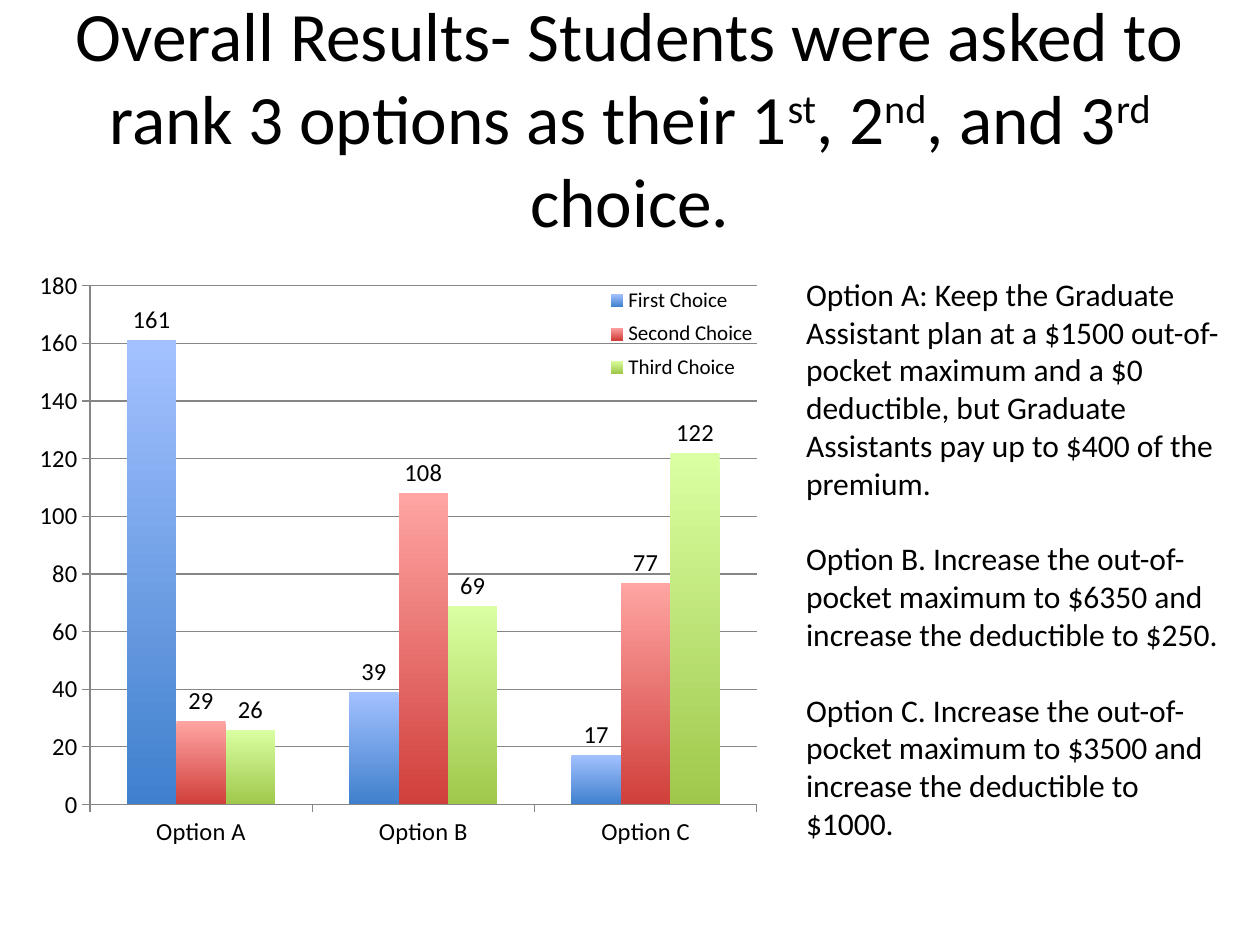
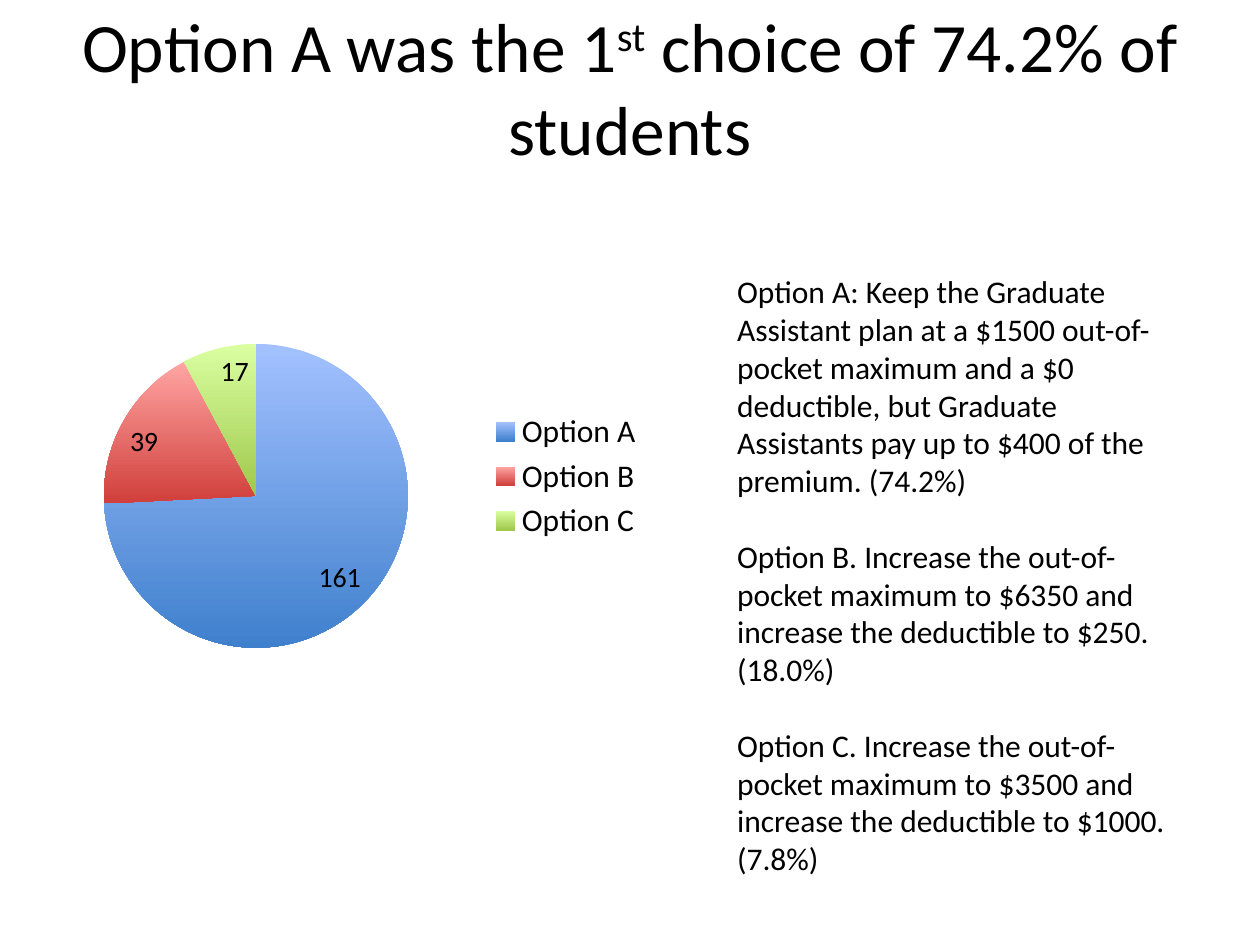
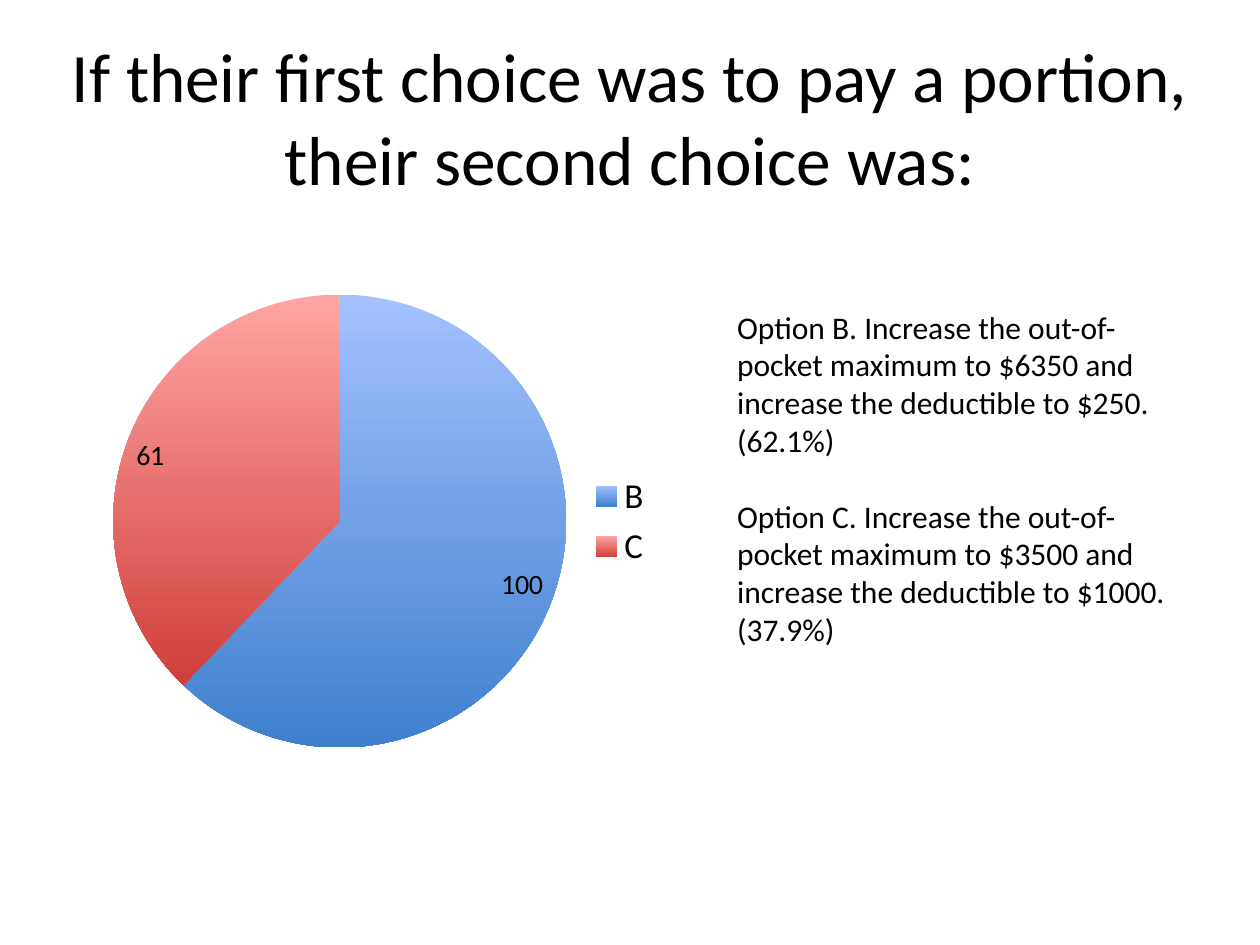
from lxml.etree import SubElement
from pptx import Presentation
from pptx.chart.data import CategoryChartData
from pptx.dml.color import RGBColor
from pptx.enum.chart import XL_CHART_TYPE, XL_LABEL_POSITION, XL_LEGEND_POSITION, XL_TICK_MARK
from pptx.enum.text import MSO_ANCHOR, MSO_AUTO_SIZE, PP_ALIGN
from pptx.oxml import parse_xml
from pptx.oxml.ns import nsdecls, qn
from pptx.util import Cm, Pt

FACE = "Calibri"
BLACK = RGBColor(0x00, 0x00, 0x00)
GREY = RGBColor(0x86, 0x86, 0x86)
BLUE = RGBColor(0xA3, 0xC1, 0xFF), RGBColor(0x3F, 0x80, 0xCD)
RED = RGBColor(0xFF, 0xA5, 0xA3), RGBColor(0xD0, 0x3F, 0x3B)
GREEN = RGBColor(0xDA, 0xFF, 0xA2), RGBColor(0x9F, 0xC8, 0x4B)
TONES = BLUE, RED, GREEN

PLAN_A = ("Option A: Keep the Graduate Assistant plan at a $1500 out-of-pocket maximum "
          "and a $0 deductible, but Graduate Assistants pay up to $400 of the premium.")
PLAN_B = ("Option B. Increase the out-of-pocket maximum to $6350 "
          "and increase the deductible to $250.")
PLAN_C = ("Option C. Increase the out-of-pocket maximum to $3500 "
          "and increase the deductible to $1000.")
OPTIONS = "Option A", "Option B", "Option C"


def style(font, size):
    """Give a font the shared face and colour at a size in points."""
    font.name = FACE
    font.size = Pt(size)
    font.color.rgb = BLACK


def add_text(slide, box):
    """Add a wrapping text box and return its frame."""
    frame = slide.shapes.add_textbox(*map(Cm, box)).text_frame
    frame.word_wrap = True
    return frame


def add_title(slide, box, *parts):
    """Add a centred title whose every second part is raised."""
    frame = add_text(slide, box)
    frame.vertical_anchor = MSO_ANCHOR.MIDDLE
    para = frame.paragraphs[0]
    para.alignment = PP_ALIGN.CENTER
    style(para.font, 39.6)
    for index, part in enumerate(parts):
        run = para.add_run()
        run.text = part
        style(run.font, 39.6)
        if index % 2:
            run._r.get_or_add_rPr().set("baseline", "30000")


def add_plans(slide, box, plans, drop=0.13):
    """List the plans, a line apart, starting a drop below the box top."""
    frame = add_text(slide, box)
    frame.auto_size = MSO_AUTO_SIZE.SHAPE_TO_FIT_TEXT
    frame.margin_top = Cm(drop)
    for index, plan in enumerate(plans):
        para = frame.paragraphs[0] if index == 0 else frame.add_paragraph()
        para.text = plan
        style(para.font, 18)
        if index:
            para.space_before = Pt(21.6)


def shade(part, tones):
    """Fill a chart part from a light top to a dark bottom."""
    fill = part.format.fill
    fill.gradient()
    fill.gradient_angle = 270
    for stop, tone in zip(fill.gradient_stops, tones):
        stop.color.rgb = tone


def lay_out(parent, index, box, inner=False):
    """Place a chart part by fractions of the chart's size."""
    for old in parent.findall(qn("c:layout")):
        parent.remove(old)
    layout = parse_xml(f"<c:layout {nsdecls('c')}><c:manualLayout/></c:layout>")
    rules = [("layoutTarget", "inner")] if inner else []
    rules += [("xMode", "edge"), ("yMode", "edge"), *zip("xywh", box)]
    for name, value in rules:
        SubElement(layout[0], qn(f"c:{name}")).set("val", str(value))
    parent.insert(index, layout)


def add_graph(slide, kind, box, area, cats, series, sizes):
    """Add a chart with value labels and a legend on the right."""
    data = CategoryChartData()
    data.categories = cats
    for name, values in series:
        data.add_series(name, values)
    chart = slide.shapes.add_chart(kind, *map(Cm, box), data).chart
    chart.has_title = False
    style(chart.font, 10)
    chart.has_legend = True
    chart.legend.position = XL_LEGEND_POSITION.RIGHT
    chart.legend.include_in_layout = False
    plot = chart.plots[0]
    plot.has_data_labels = True
    labels = plot.data_labels
    labels.show_value = True
    for font, size in zip((labels.font, chart.legend.font), sizes):
        style(font, size)
    lay_out(chart._chartSpace.chart.plotArea, 0, area, True)
    return chart


def add_bars(slide, box):
    """Chart how often each option was ranked at each place."""
    ranks = (("First Choice", (161, 39, 17)),
             ("Second Choice", (29, 108, 77)),
             ("Third Choice", (26, 69, 122)))
    chart = add_graph(slide, XL_CHART_TYPE.COLUMN_CLUSTERED, box,
                      (0.0745, 0.044, 0.724, 0.865), OPTIONS, ranks, (14, 12))
    plot = chart.plots[0]
    plot.vary_by_categories = False
    plot.gap_width = 150
    plot.overlap = 0
    plot.data_labels.position = XL_LABEL_POSITION.OUTSIDE_END
    for row, tones in zip(plot.series, TONES):
        row.invert_if_negative = False
        shade(row, tones)
    for axis in (chart.category_axis, chart.value_axis):
        style(axis.tick_labels.font, 14)
        axis.major_tick_mark = XL_TICK_MARK.OUTSIDE
        axis.format.line.color.rgb = GREY
    scale = chart.value_axis
    scale.minimum_scale, scale.maximum_scale, scale.major_unit = 0, 180, 20
    scale.major_gridlines.format.line.color.rgb = GREY
    lay_out(chart.legend._element, 1, (0.627, 0.034, 0.18, 0.18))


def add_pie(slide, box, area, cats, values, size):
    """Chart how one choice was shared among the options."""
    chart = add_graph(slide, XL_CHART_TYPE.PIE, box, area, cats,
                      [("Series 1", values)], (16, size))
    plot = chart.plots[0]
    plot.vary_by_categories = True
    plot.data_labels.position = XL_LABEL_POSITION.INSIDE_END
    for index, tones in enumerate(TONES[:len(cats)]):
        shade(plot.series[0].points[index], tones)


def show_all(slide):
    """Build the slide of overall results."""
    add_title(slide, (1.27, 0.76, 22.86, 3.18),
              "Overall Results- Students were asked to rank 3 options as their 1",
              "st", ", 2", "nd", ", and 3", "rd", " choice.")
    add_plans(slide, (16, 5.41, 9.12, 11.79), (PLAN_A, PLAN_B, PLAN_C))
    add_bars(slide, (0.43, 5.23, 18.57, 12.09))


def show_first(slide):
    """Build the slide of first choices."""
    add_title(slide, (0, 0.15, 25.4, 3.18),
              "Option A was the 1", "st", " choice of 74.2% of students")
    add_plans(slide, (14.61, 5.36, 9.53, 12.57),
              (f"{PLAN_A} (74.2%)", f"{PLAN_B} (18.0%)", f"{PLAN_C} (7.8%)"))
    add_pie(slide, (0.53, 5.79, 12.7, 7.62), (0.123, 0.15, 0.483, 0.804),
            OPTIONS, (161, 39, 17), 18)


def show_next(slide):
    """Build the slide of second choices."""
    add_title(slide, (0, 0.76, 25.4, 3.18),
              "If their first choice was to pay a portion, their second choice was:")
    add_plans(slide, (14.61, 5.31, 9.53, 7.95),
              (f"{PLAN_B} (62.1%)", f"{PLAN_C} (37.9%)"), 0.89)
    add_pie(slide, (1.96, 5.28, 11.46, 10.46), (0.028, 0.063, 0.797, 0.873),
            ("B", "C"), (100, 61), 20)


def main():
    """Build and save the deck."""
    deck = Presentation()
    deck.slide_width, deck.slide_height = Cm(25.4), Cm(19.05)
    for show in (show_all, show_first, show_next):
        show(deck.slides.add_slide(deck.slide_layouts[6]))
    deck.save("out.pptx")


if __name__ == "__main__":
    main()
